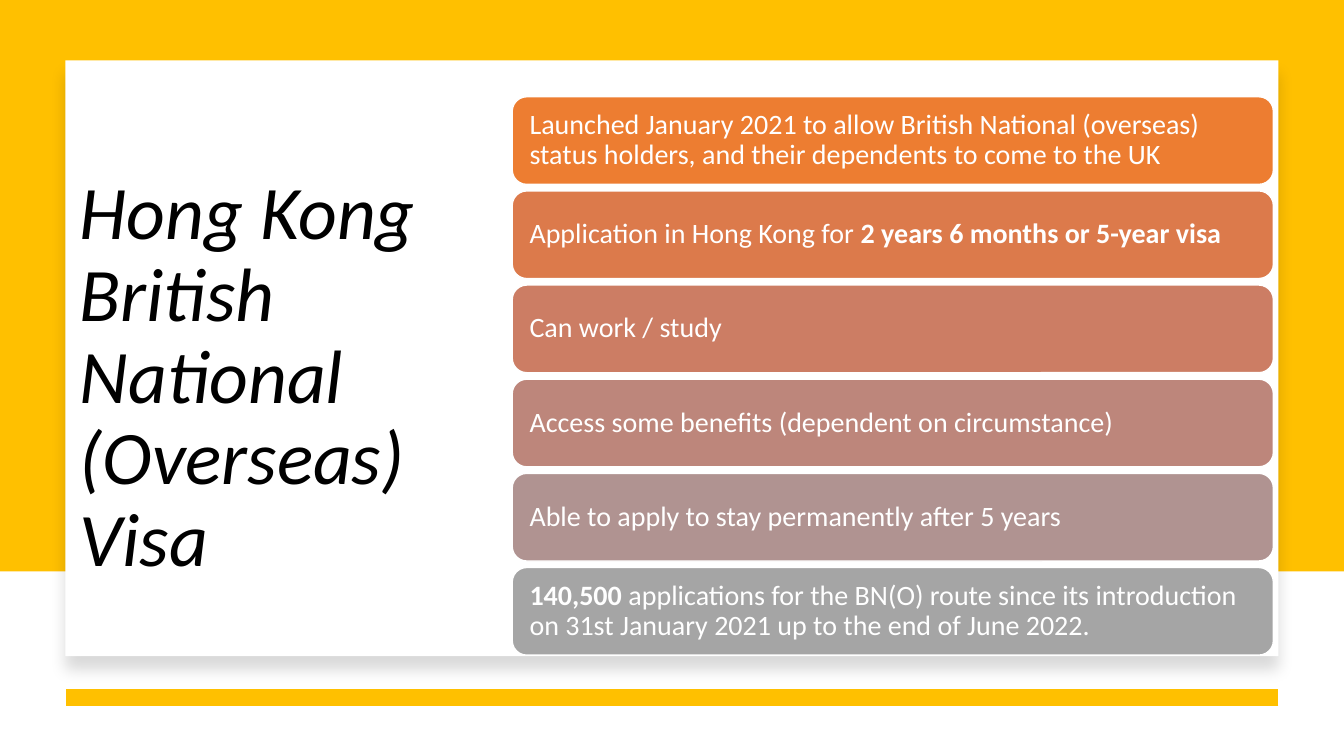
from dataclasses import dataclass

from lxml.etree import SubElement
from pptx import Presentation
from pptx.dml.color import RGBColor as RGB
from pptx.enum.shapes import MSO_CONNECTOR as Link, MSO_SHAPE as Form
from pptx.enum.text import MSO_ANCHOR as Anchor, MSO_AUTO_SIZE as Fit, PP_ALIGN as Align
from pptx.oxml import parse_xml
from pptx.oxml.ns import nsdecls, qn
from pptx.util import Inches, Pt


@dataclass(frozen=True)
class Theme:
    font: str = "Calibri"
    gold: str = "FFC000"
    white: str = "FFFFFF"
    black: str = "000000"
    bars: tuple = ("ED7D31", "DC7A4B", "CC7D64", "BD867B", "B09391", "A5A5A5")
    head: int = 54
    body: int = 20
    lead: float = 0.9


SHADE = f"""<a:effectLst {nsdecls("a")}>
<a:outerShdw blurRad="{Pt(11)}" dist="{Pt(10)}" dir="5400000" algn="t" rotWithShape="0">
<a:srgbClr val="000000"><a:alpha val="15000"/></a:srgbClr></a:outerShdw></a:effectLst>"""

TITLE = "Hong Kong British National (Overseas) Visa"
FACTS = [
    [("Launched January 2021 to allow British National (overseas) status holders, "
      "and their dependents to come to the UK", False)],
    [("Application in Hong Kong for ", False), ("2 years 6 months or 5-year visa", True)],
    [("Can work / study", False)],
    [("Access some benefits (dependent on circumstance)", False)],
    [("Able to apply to stay permanently after 5 years", False)],
    [("140,500", True),
     (" applications for the BN(O) route since its introduction on 31st January 2021 "
      "up to the end of June 2022.", False)],
]


def style(item, values):
    for name, value in values.items():
        setattr(item, name, value)


class Deck:
    """Draws styled elements on the current slide."""

    def __init__(self, theme):
        self.theme = theme
        self.file = Presentation()
        style(self.file, {"slide_width": Inches(13.33), "slide_height": Inches(7.5)})
        self.slide = self.file.slides.add_slide(self.file.slide_layouts[5])

    def shape(self, form, box, color, edge=None, shade=False):
        shape = self.slide.shapes.add_shape(form, *map(Inches, box))
        shape.fill.solid()
        shape.fill.fore_color.rgb = RGB.from_string(color)
        if edge:
            shape.line.color.rgb = RGB.from_string(edge)
            shape.line.width = Pt(1)
        else:
            shape.line.fill.background()
        if shade:
            shape._element.spPr.append(parse_xml(SHADE))
        else:
            shape.shadow.inherit = False
        return shape

    def rule(self, start, end, color, width):
        line = self.slide.shapes.add_connector(Link.STRAIGHT, *map(Inches, start + end))
        line.line.color.rgb = RGB.from_string(color)
        line.line.width = Pt(width)
        SubElement(line._element.spPr, qn("a:effectLst"))

    def text(self, shape, parts, size, color, pad, slant=False):
        frame = shape.text_frame
        style(frame, {"word_wrap": True, "auto_size": Fit.NONE,
                      "vertical_anchor": Anchor.MIDDLE,
                      "margin_left": Inches(pad), "margin_right": Inches(pad)})
        para = frame.paragraphs[0]
        style(para, {"alignment": Align.LEFT, "line_spacing": self.theme.lead})
        for words, bold in parts:
            run = para.add_run()
            run.text = words
            style(run.font, {"name": self.theme.font, "size": Pt(size),
                             "bold": bold, "italic": slant})
            run.font.color.rgb = RGB.from_string(color)

    def title(self, words, box):
        title = self.slide.shapes.title
        style(title, dict(zip(("left", "top", "width", "height"), map(Inches, box))))
        self.text(title, [(words, False)], self.theme.head, self.theme.black, 0.1, True)
        self.slide.shapes._spTree.append(title._element)

    def bar(self, box, parts, color):
        bar = self.shape(Form.ROUNDED_RECTANGLE, box, color, self.theme.white)
        self.text(bar, parts, self.theme.body, self.theme.white, 0.13)


def main():
    theme = Theme()
    deck = Deck(theme)
    deck.shape(Form.RECTANGLE, (0, 0, 13.33, 5.67), theme.gold)
    deck.shape(Form.RECTANGLE, (0.65, 0.6, 12.03, 5.91), theme.white, shade=True)
    deck.rule((12.68, 6.92), (0.65, 6.92), theme.gold, 12)
    deck.title(TITLE, (0.69, 0.7, 3.74, 6.11))
    top, last = 0.96, 5.63
    step = (last - top) / (len(FACTS) - 1)
    for row, (parts, color) in enumerate(zip(FACTS, theme.bars)):
        deck.bar((5.08, top + row * step, 7.55, 0.87), parts, color)
    deck.file.save("out.pptx")


if __name__ == "__main__":
    main()
